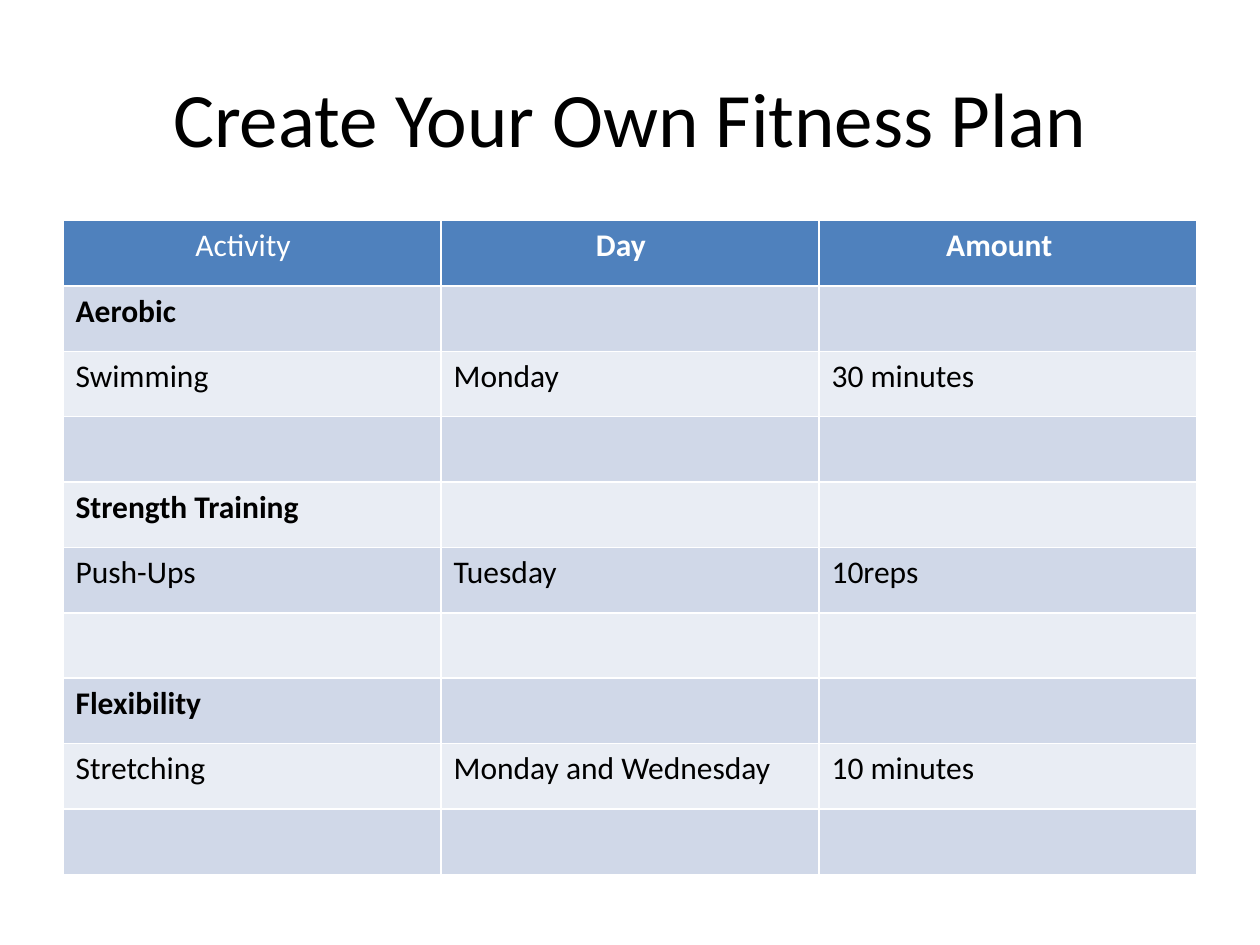
from pptx import Presentation
from pptx.dml.color import RGBColor
from pptx.enum.text import MSO_ANCHOR, PP_ALIGN
from pptx.util import Inches, Pt

CENTER = PP_ALIGN.CENTER
MIDDLE = MSO_ANCHOR.MIDDLE
TITLE_ONLY = 5

COLORS = {"text": "000000", "light": "FFFFFF", "head": "4F81BD",
          "odd": "D0D8E8", "even": "E9EDF4"}

# Header label, left margin of the label, bold
HEADS = [("Activity", 1.05, False), ("Day", 1.23, True), ("Amount", 1.01, True)]

# Each group: heading and its planned activity
PLAN = [
    ("Aerobic", ("Swimming", "Monday", "30 minutes")),
    ("Strength Training", ("Push-Ups", "Tuesday", "10reps")),
    ("Flexibility", ("Stretching", "Monday and Wednesday", "10 minutes")),
]


class Deck:
    font = "Calibri"

    def __init__(self):
        self.prs = Presentation()
        self.prs.slide_width = Inches(10)
        self.prs.slide_height = Inches(7.5)
        self.slide = self.prs.slides.add_slide(self.prs.slide_layouts[TITLE_ONLY])

    def color(self, name):
        return RGBColor.from_string(COLORS[name])

    def style(self, para, size, color, bold=False):
        font = para.font
        font.name, font.size, font.bold = self.font, Pt(size), bold
        font.color.rgb = self.color(color)

    def title(self, text, left, top, width, height):
        box = self.slide.shapes.title
        box.left, box.top = Inches(left), Inches(top)
        box.width, box.height = Inches(width), Inches(height)
        frame = box.text_frame
        frame.text = text
        frame.vertical_anchor = MIDDLE
        para = frame.paragraphs[0]
        para.alignment = CENTER
        self.style(para, 44, "text")

    def table(self, rows, cols, left, top, width, height):
        return self.slide.shapes.add_table(
            rows, cols, Inches(left), Inches(top),
            Inches(width), Inches(height)).table

    def cell(self, cell, text, fill, color="text", bold=False):
        cell.fill.solid()
        cell.fill.fore_color.rgb = self.color(fill)
        cell.text = text
        self.style(cell.text_frame.paragraphs[0], 18, color, bold)


def main():
    deck = Deck()
    deck.title("Create Your Own Fitness Plan", 0.5, 0.3, 9, 1.25)

    # Header row
    grid = deck.table(1 + 3 * len(PLAN), len(HEADS), 0.5, 1.75, 9, 5.19)
    for col, (label, margin, bold) in enumerate(HEADS):
        cell = grid.cell(0, col)
        deck.cell(cell, label, "head", "light", bold)
        cell.margin_left = Inches(margin)

    # Groups: heading, activity and a free row
    empty = ("", "", "")
    rows = []
    for name, task in PLAN:
        rows += [((name, "", ""), True), (task, False), (empty, False)]
    for row, (texts, bold) in enumerate(rows, 1):
        fill = "odd" if row % 2 else "even"
        for col, text in enumerate(texts):
            deck.cell(grid.cell(row, col), text, fill, bold=bold)

    deck.prs.save("out.pptx")


if __name__ == "__main__":
    main()
